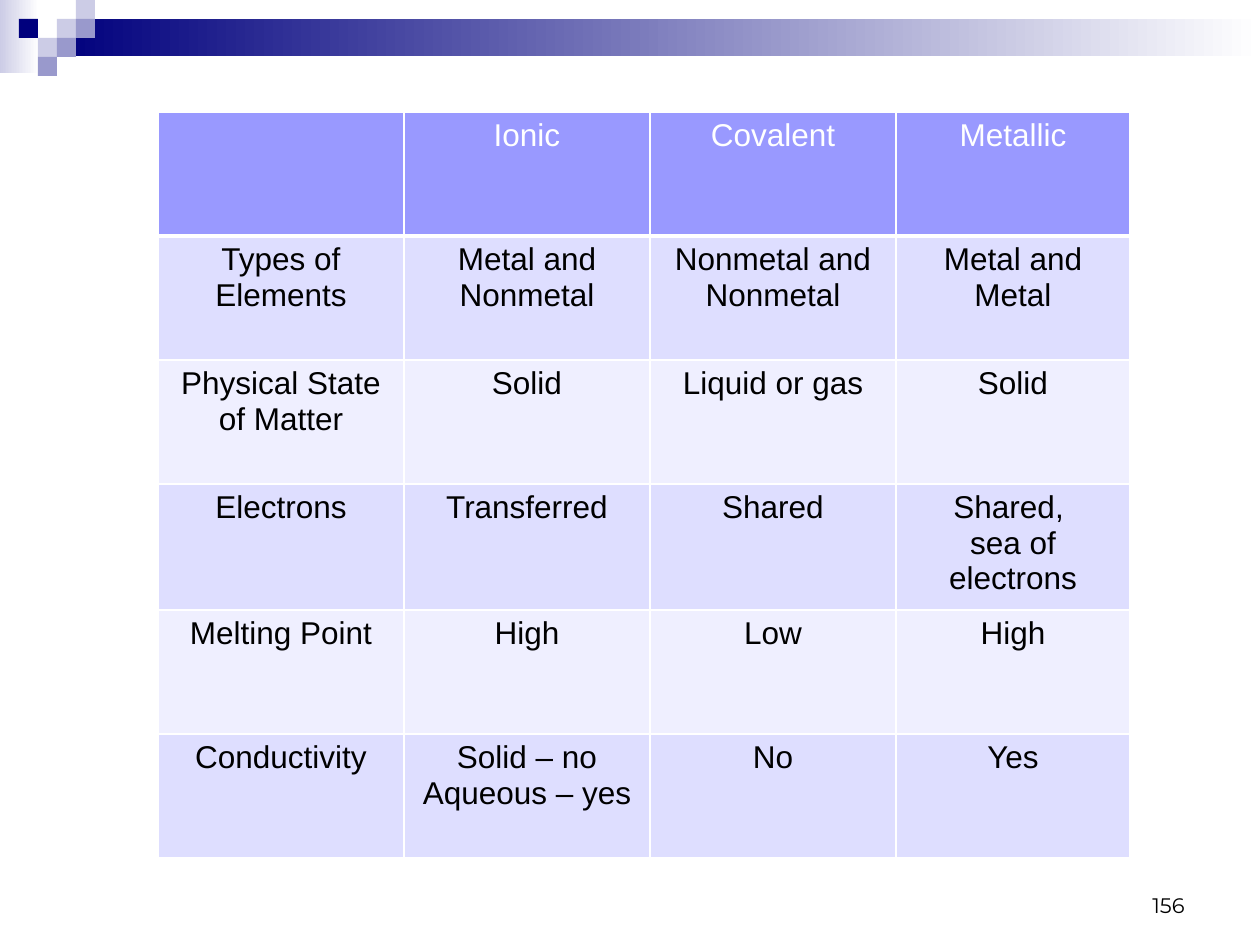
from lxml.etree import SubElement
from pptx import Presentation
from pptx.dml.color import RGBColor
from pptx.enum.shapes import MSO_SHAPE as Shape
from pptx.enum.text import MSO_ANCHOR as Anchor, PP_ALIGN as Align
from pptx.oxml.ns import qn
from pptx.util import Pt

SCALE = 914400 / 126  # EMU in one px
STEP = 19  # side of a corner square

NAVY, LILAC, MAUVE = "00007D", "CCCCE6", "9999CC"
WHITE, BLACK = "FFFFFF", "000000"
HEAD, BANDS = "9999FF", ("DEDEFF", "EFEFFF")

# column, row and colour of each corner square
SQUARES = [
    (3, 1, LILAC), (4, 0, LILAC), (4, 1, MAUVE), (2, 2, LILAC),
    (1, 1, NAVY), (3, 2, MAUVE), (2, 3, MAUVE),
]

ROWS = [
    ["", "Ionic", "Covalent", "Metallic"],
    ["Types of Elements", "Metal and Nonmetal", "Nonmetal and Nonmetal",
     "Metal and Metal"],
    ["Physical State of Matter", "Solid", "Liquid or gas", "Solid"],
    ["Electrons", "Transferred", "Shared", "Shared, \nsea of electrons"],
    ["Melting Point", "High", "Low", "High"],
    ["Conductivity", "Solid – no\nAqueous – yes", "No", "Yes"],
]


def px(n):
    return round(n * SCALE)


def rgb(code):
    return RGBColor.from_string(code)


class Deck:
    """Holds the style and the current slide."""

    font, size = "Arial", 18

    def __init__(self, wide, high):
        self.prs = Presentation()
        self.prs.slide_width, self.prs.slide_height = px(wide), px(high)
        self.slide = self.prs.slides.add_slide(self.prs.slide_layouts[6])

    def rect(self, box, color, fade=None):
        """Draw a plain rectangle, or one that fades from left to right."""
        shape = self.slide.shapes.add_shape(Shape.RECTANGLE, *map(px, box))
        shape.shadow.inherit = False
        shape.line.fill.background()
        if fade is None:
            shape.fill.solid()
            shape.fill.fore_color.rgb = rgb(color)
            return
        shape.fill.gradient()
        shape.fill.gradient_angle = 0
        for stop, code in zip(shape.fill.gradient_stops, (color, fade)):
            stop.color.rgb = rgb(code)

    def style(self, frame, color, align, font=None, size=None):
        for para in frame.paragraphs:
            para.alignment = align
            para.font.name = font or self.font
            para.font.size = Pt(size or self.size)
            para.font.color.rgb = rgb(color)

    def number(self, box, text):
        frame = self.slide.shapes.add_textbox(*map(px, box)).text_frame
        frame.word_wrap = True
        frame.vertical_anchor = Anchor.BOTTOM
        frame.text = text
        self.style(frame, BLACK, Align.RIGHT, "Montserrat", 12)

    def edges(self, cell, base):
        """Rule the cell in white, with a base line of the given points."""
        props = cell._tc.get_or_add_tcPr()
        for side, width in zip("LRTB", (1, 1, 1, base)):
            line = SubElement(props, qn(f"a:ln{side}"), w=str(Pt(width)))
            fill = SubElement(line, qn("a:solidFill"))
            SubElement(fill, qn("a:srgbClr"), val=WHITE)

    def table(self, left, top, widths, height, rows):
        box = left, top, sum(widths), height * len(rows)
        grid = self.slide.shapes.add_table(
            len(rows), len(widths), *map(px, box)).table
        for col, width in zip(grid.columns, widths):
            col.width = px(width)
        for i, texts in enumerate(rows):
            grid.rows[i].height = px(height)
            back = BANDS[(i - 1) % 2] if i else HEAD
            for j, text in enumerate(texts):
                cell = grid.cell(i, j)
                cell.text = text
                self.style(cell.text_frame, BLACK if i else WHITE,
                           Align.CENTER)
                self.edges(cell, 1 if i else 3)
                cell.fill.solid()
                cell.fill.fore_color.rgb = rgb(back)


def main():
    deck = Deck(1260, 945)
    deck.rect((0, 0, 39, 73), LILAC, WHITE)
    deck.rect((57, STEP, 1203, 37), NAVY, WHITE)
    for col, row, color in SQUARES:
        deck.rect((col * STEP, row * STEP, STEP, STEP), color)
    deck.number((903, 861, 294, 63), "156")
    deck.table(158, 112, (246, 246, 246, 234), 124, ROWS)
    deck.prs.save("out.pptx")


if __name__ == "__main__":
    main()
